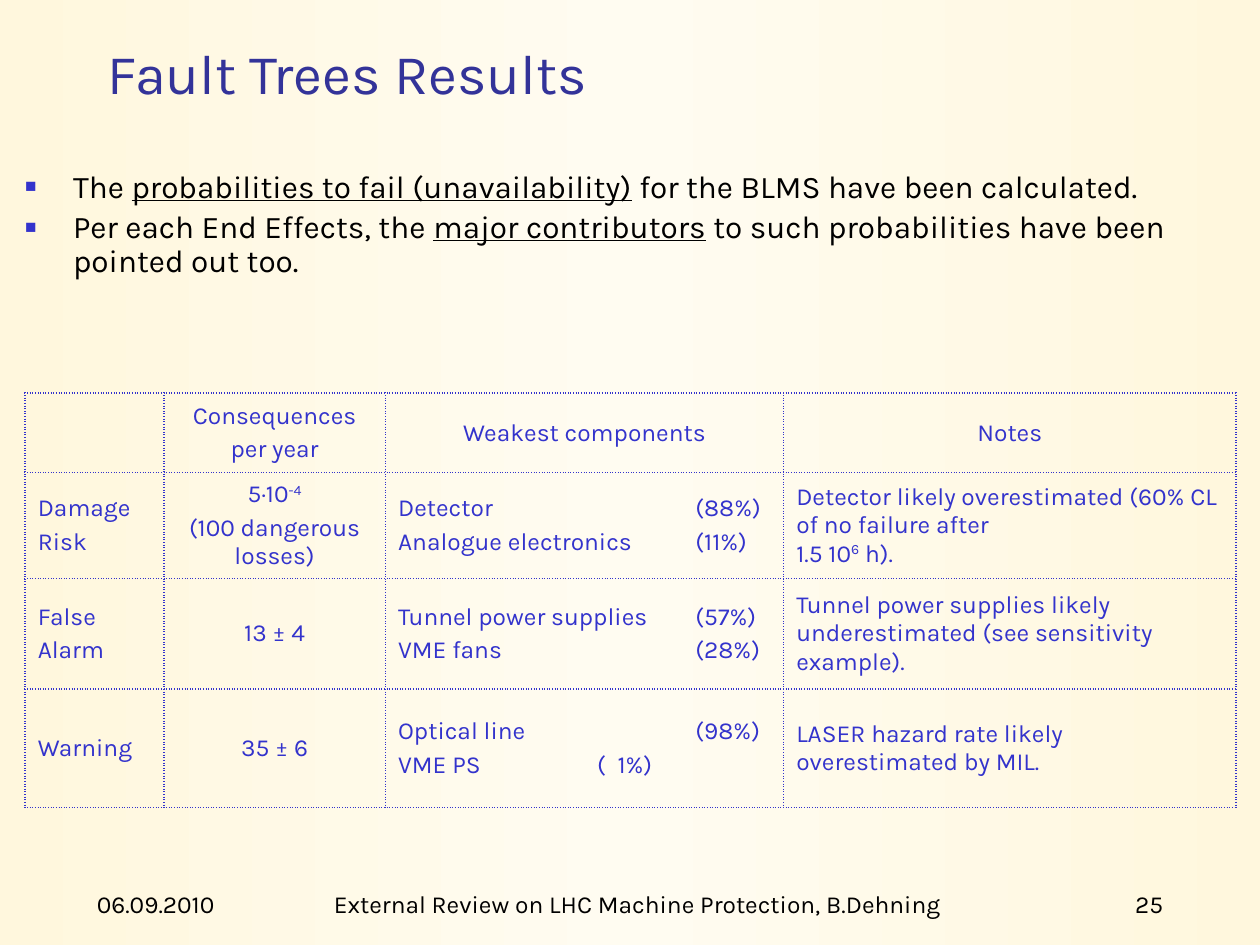
import copy

import pptx
import pptx.dml.color
import pptx.enum.dml
import pptx.enum.text
import pptx.oxml
import pptx.oxml.ns
import pptx.util

Inches = pptx.util.Inches
Pt = pptx.util.Pt
RGBColor = pptx.dml.color.RGBColor
ALIGN = pptx.enum.text.PP_ALIGN
ANCHOR = pptx.enum.text.MSO_ANCHOR
AUTOSIZE = pptx.enum.text.MSO_AUTO_SIZE

CREAM = RGBColor(0xFF, 0xF7, 0xDD)
IVORY = RGBColor(0xFF, 0xFC, 0xF1)
NAVY = RGBColor(0x33, 0x33, 0x99)
BLUE = RGBColor(0x33, 0x33, 0xCC)
BLACK = RGBColor(0, 0, 0)

FONT = "Karla"
TITLE_FONT = {"name": FONT, "size": Pt(32)}
BODY_FONT = {"name": FONT, "size": Pt(18)}
SMALL_FONT = {"name": FONT, "size": Pt(14)}

# Text between bars is underlined.
BULLETS = [
    "The |probabilities to fail (unavailability)| for the BLMS have been calculated.",
    "Per each End Effects, the |major contributors| to such probabilities have been pointed out too.",
]

# Each cell is a list of paragraphs; text between bars is superscript.
ROWS = [
    [[], ["Consequences", "per year"], ["Weakest components"], ["Notes"]],
    [["Damage", "Risk"],
     ["5·10|-4|", "(100 dangerous\nlosses)"],
     ["Detector\t(88%)", "Analogue electronics\t(11%)"],
     ["Detector likely overestimated (60% CL of no failure after\n1.5 10|6| h)."]],
    [["False", "Alarm"],
     ["13 ± 4"],
     ["Tunnel power supplies\t(57%)", "VME fans\t(28%)"],
     ["Tunnel power supplies likely underestimated (see sensitivity example)."]],
    [["Warning"],
     ["35 ± 6"],
     ["Optical line\t(98%)", "VME PS\t(  1%)"],
     ["LASER hazard rate likely overestimated by MIL."]],
]
COLUMN_WIDTHS = [1.1, 1.76, 3.16, 3.59]
ROW_HEIGHTS = [0.63, 0.84, 0.88, 0.94]
TAB_STOP = 2.36
SHORT_TAB_STOP = 1.58

FOOTERS = [
    ("06.09.2010", 0.67, 1.66, ALIGN.LEFT),
    ("External Review on LHC Machine Protection, B.Dehning", 2.44, 5.24, ALIGN.CENTER),
    ("25", 8.27, 1.06, ALIGN.RIGHT),
]


def set_values(target, values):
    for name, value in values.items():
        setattr(target, name, value)


def add_xml(parent, xml, index=None):
    """Parse a fragment in the a: namespace and insert it, last by default."""
    tag, rest = xml[:-2].split(" ", 1) if " " in xml.split(">")[0] else (xml[:-2], "")
    element = pptx.oxml.parse_xml(f"{tag} {pptx.oxml.ns.nsdecls('a')} {rest}{xml[-2:]}")
    parent.insert(len(parent) if index is None else index, element)


def place(shape, left, top, width, height):
    bounds = {"left": left, "top": top, "width": width, "height": height}
    set_values(shape, {name: Inches(value) for name, value in bounds.items()})


def write(para, text, font, color, mark=None):
    """Add runs, calling mark on those between bars; a newline breaks the line."""
    for index, piece in enumerate(text.split("|")):
        for number, line in enumerate(piece.split("\n")):
            if number:
                para.add_line_break()
            if not line:
                continue
            run = para.add_run()
            run.text = line
            set_values(run.font, font)
            run.font.color.rgb = color
            if index % 2:
                mark(run)


def underline(run):
    run.font.underline = True


def superscript(run):
    run._r.get_or_add_rPr().set("baseline", "30000")


def paint_background(slide):
    fill = slide.background.fill
    fill.gradient()
    fill.gradient_angle = 0
    stop_list = slide._element.find(".//" + pptx.oxml.ns.qn("a:gsLst"))
    stop_list.insert(1, copy.deepcopy(stop_list[0]))
    for stop, position, color in zip(fill.gradient_stops, (0, 0.5, 1), (CREAM, IVORY, CREAM)):
        stop.position = position
        stop.color.rgb = color


def add_title(slide, text):
    title = slide.shapes.title
    place(title, 0.75, 0.24, 8.52, 0.65)
    set_values(title.text_frame, {"vertical_anchor": ANCHOR.BOTTOM, "auto_size": AUTOSIZE.NONE})
    para = title.text_frame.paragraphs[0]
    para.alignment = ALIGN.LEFT
    write(para, text, TITLE_FONT, NAVY)


def add_bullets(slide, bullets):
    body = slide.placeholders[1]
    place(body, 0.2, 1.31, 9.61, 0.97)
    frame = body.text_frame
    set_values(frame, {"margin_left": 0, "margin_right": 0,
                       "auto_size": AUTOSIZE.SHAPE_TO_FIT_TEXT})
    for index, text in enumerate(bullets):
        para = frame.add_paragraph() if index else frame.paragraphs[0]
        set_values(para, {"line_spacing": 0.9, "space_before": Pt(3.6)})
        properties = para._p.get_or_add_pPr()
        properties.set("marL", str(Inches(0.38)))
        properties.set("indent", str(-Inches(0.38)))
        bullet_color = pptx.oxml.parse_xml(
            f'<a:buClr {pptx.oxml.ns.nsdecls("a")}><a:srgbClr val="{BLUE}"/></a:buClr>')
        properties.append(bullet_color)
        add_xml(properties, '<a:buSzPct val="60000"/>')
        add_xml(properties, '<a:buChar char="■"/>')
        write(para, text, BODY_FONT, BLACK, underline)


def add_tab_stop(para, position):
    tabs = pptx.oxml.parse_xml(
        f'<a:tabLst {pptx.oxml.ns.nsdecls("a")}>'
        f'<a:tab pos="{Inches(position)}" algn="l"/></a:tabLst>')
    para._p.get_or_add_pPr().append(tabs)


def draw_borders(cell):
    properties = cell._tc.get_or_add_tcPr()
    for side in "LRTB":
        border = pptx.oxml.parse_xml(
            f'<a:ln{side} {pptx.oxml.ns.nsdecls("a")} w="{Pt(1)}">'
            f'<a:solidFill><a:srgbClr val="{BLUE}"/></a:solidFill>'
            f'<a:prstDash val="sysDot"/></a:ln{side}>')
        properties.append(border)


def fill_cell(cell, paragraphs, alignment):
    draw_borders(cell)
    cell.fill.background()
    cell.vertical_anchor = ANCHOR.MIDDLE
    frame = cell.text_frame
    for index, text in enumerate(paragraphs):
        para = frame.add_paragraph() if index else frame.paragraphs[0]
        set_values(para, {"alignment": alignment, "space_before": Pt(2.8)})
        if "\t" in text:
            add_tab_stop(para, SHORT_TAB_STOP if text.startswith("VME PS") else TAB_STOP)
        write(para, text, SMALL_FONT, BLUE, superscript)


def add_results_table(slide):
    frame = slide.shapes.add_table(
        len(ROWS), len(COLUMN_WIDTHS), Inches(0.2), Inches(3.12),
        Inches(sum(COLUMN_WIDTHS)), Inches(sum(ROW_HEIGHTS)))
    table = frame.table
    set_values(table, {"first_row": False, "horz_banding": False})
    for column, width in zip(table.columns, COLUMN_WIDTHS):
        column.width = Inches(width)
    for row, height in zip(table.rows, ROW_HEIGHTS):
        row.height = Inches(height)
    for r, cells in enumerate(ROWS):
        for c, paragraphs in enumerate(cells):
            centred = r == 0 or c == 1
            fill_cell(table.cell(r, c), paragraphs, ALIGN.CENTER if centred else ALIGN.LEFT)


def add_footer(slide, text, left, width, alignment):
    box = slide.shapes.add_textbox(Inches(left), Inches(6.92), Inches(width), Inches(0.42))
    set_values(box.text_frame, {"word_wrap": True, "vertical_anchor": ANCHOR.BOTTOM})
    para = box.text_frame.paragraphs[0]
    para.alignment = alignment
    write(para, text, SMALL_FONT, BLACK)


def main():
    deck = pptx.Presentation()
    set_values(deck, {"slide_width": Inches(10), "slide_height": Inches(7.5)})
    slide = deck.slides.add_slide(deck.slide_layouts[1])
    paint_background(slide)
    add_title(slide, "Fault Trees Results")
    add_bullets(slide, BULLETS)
    add_results_table(slide)
    for footer in FOOTERS:
        add_footer(slide, *footer)
    deck.save("out.pptx")


if __name__ == "__main__":
    main()
